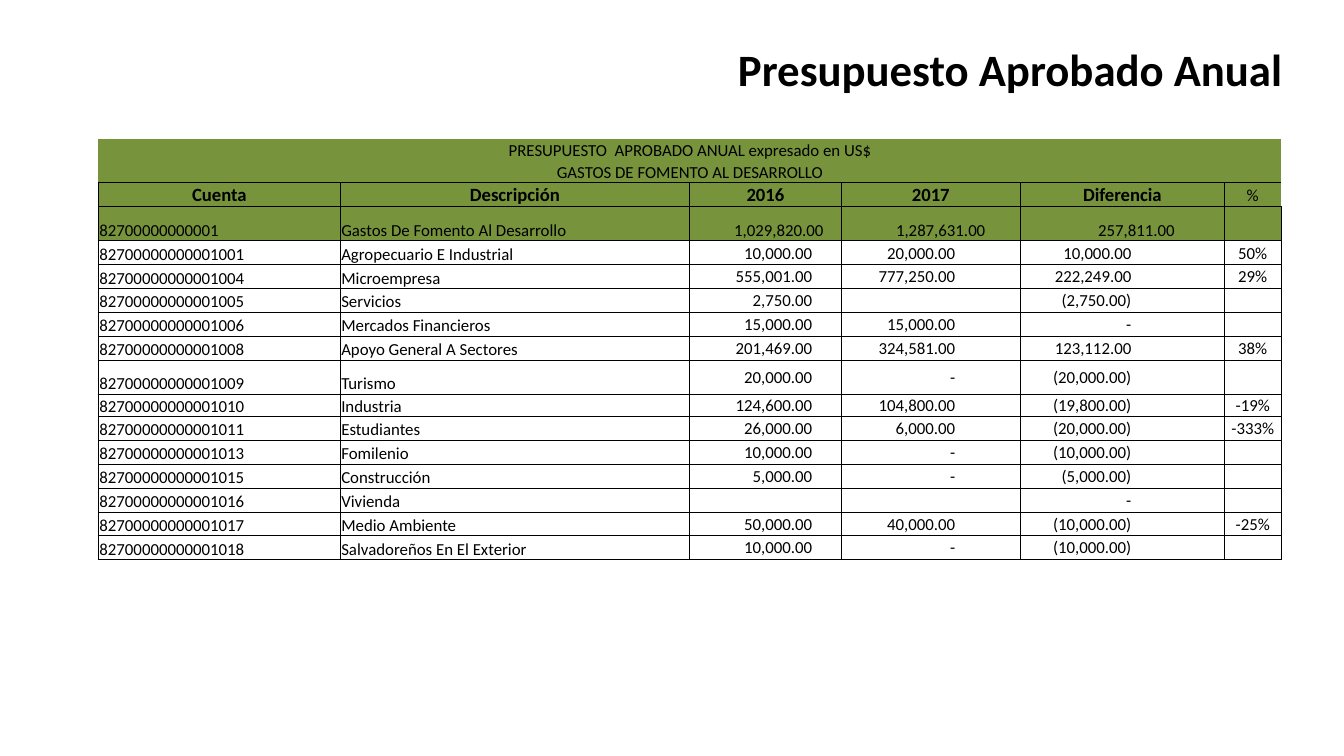
import pptx
import pptx.dml.color
import pptx.enum.text
import pptx.util
from lxml import etree
from pptx.oxml.ns import qn

Cm = pptx.util.Cm
Pt = pptx.util.Pt
ALIGN = pptx.enum.text.PP_ALIGN
ANCHOR = pptx.enum.text.MSO_ANCHOR

BLACK = pptx.dml.color.RGBColor(0x00, 0x00, 0x00)
GREEN = pptx.dml.color.RGBColor(0x77, 0x93, 0x3C)
FONT = "Calibri"
BODY_SIZE = 9

BANDS = ["PRESUPUESTO  APROBADO ANUAL expresado en US$",
         "GASTOS DE FOMENTO AL DESARROLLO"]
HEADINGS = ["Cuenta", "Descripción", "2016", "2017", "Diferencia", "%"]
TOTAL = ["82700000000001", "Gastos De Fomento Al Desarrollo",
         "1,029,820.00", "1,287,631.00", "257,811.00", ""]
ACCOUNT_PREFIX = "82700000000001"
ACCOUNTS = [
    ["001", "Agropecuario E Industrial", "10,000.00", "20,000.00", "10,000.00", "50%"],
    ["004", "Microempresa", "555,001.00", "777,250.00", "222,249.00", "29%"],
    ["005", "Servicios", "2,750.00", "", "(2,750.00)", ""],
    ["006", "Mercados Financieros", "15,000.00", "15,000.00", "-", ""],
    ["008", "Apoyo General A Sectores", "201,469.00", "324,581.00", "123,112.00", "38%"],
    ["009", "Turismo", "20,000.00", "-", "(20,000.00)", ""],
    ["010", "Industria", "124,600.00", "104,800.00", "(19,800.00)", "-19%"],
    ["011", "Estudiantes", "26,000.00", "6,000.00", "(20,000.00)", "-333%"],
    ["013", "Fomilenio", "10,000.00", "-", "(10,000.00)", ""],
    ["015", "Construcción", "5,000.00", "-", "(5,000.00)", ""],
    ["016", "Vivienda", "", "", "-", ""],
    ["017", "Medio Ambiente", "50,000.00", "40,000.00", "(10,000.00)", "-25%"],
    ["018", "Salvadoreños En El Exterior", "10,000.00", "-", "(10,000.00)", ""],
]

COLUMN_WIDTHS = [4.57, 6.6, 2.87, 3.38, 3.86, 1.07]
ROW_HEIGHT = 0.45
SPECIAL_HEIGHTS = {0: 0.41, 1: 0.41, 3: 0.65, 9: 0.65, 10: 0.42}
HEADING_ROW = len(BANDS)
TOTAL_ROW = HEADING_ROW + 1
PERCENT_COLUMN = len(HEADINGS) - 1
# Space to the right of the figures, by column
TOTAL_INDENTS = {2: 0.34, 3: 0.66, 4: 0.94}
ACCOUNT_INDENTS = {2: 0.55, 3: 1.23, 4: 1.76}


def add_title(page, left, top, width, height):
    title = page.shapes.title
    title.left, title.top, title.width, title.height = left, top, width, height
    frame = title.text_frame
    frame.text = "Presupuesto Aprobado Anual"
    frame.vertical_anchor = ANCHOR.MIDDLE
    para = frame.paragraphs[0]
    para.alignment = ALIGN.RIGHT
    set_font(para, 24, True)


def set_font(para, size, bold=False):
    font = para.font
    font.name, font.size, font.bold = FONT, Pt(size), bold
    font.color.rgb = BLACK


def set_borders(cell, sides):
    """Draw thin black lines on the sides named by L, R, T and B, and none elsewhere."""
    properties = cell._tc.get_or_add_tcPr()
    for side in "LRTB":
        line = etree.SubElement(properties, qn(f"a:ln{side}"), w=str(Pt(0.5)))
        if side in sides:
            fill = etree.SubElement(line, qn("a:solidFill"))
            etree.SubElement(fill, qn("a:srgbClr"), val=str(BLACK))
        else:
            etree.SubElement(line, qn("a:noFill"))


def border_sides(row, column):
    if row < HEADING_ROW:
        return "B" if row == HEADING_ROW - 1 else ""
    if row == HEADING_ROW and column == PERCENT_COLUMN:
        return "LTB"
    return "LRTB"


def fill_cell(cell, row, column, text):
    set_borders(cell, border_sides(row, column))
    if row <= TOTAL_ROW:
        cell.fill.solid()
        cell.fill.fore_color.rgb = GREEN
    else:
        cell.fill.background()

    cell.margin_left = cell.margin_right = cell.margin_top = Cm(0.02)
    cell.margin_bottom = 0
    is_figure = row > TOTAL_ROW and column > 1
    cell.vertical_anchor = ANCHOR.MIDDLE if is_figure else ANCHOR.BOTTOM

    cell.text = text
    para = cell.text_frame.paragraphs[0]
    indents = TOTAL_INDENTS if row == TOTAL_ROW else ACCOUNT_INDENTS
    if row <= HEADING_ROW or column == PERCENT_COLUMN:
        para.alignment = ALIGN.CENTER
    elif column in indents:
        para.alignment = ALIGN.RIGHT
        cell.margin_right = Cm(indents[column])
    else:
        para.alignment = ALIGN.LEFT

    is_heading = row == HEADING_ROW and column != PERCENT_COLUMN
    set_font(para, 10 if is_heading else BODY_SIZE, is_heading)
    if not text:
        # Keeps empty cells from stretching their row
        etree.SubElement(para._p, qn("a:endParaRPr"), sz=str(BODY_SIZE * 100))


def add_budget_table(page, left, top, width, height):
    rows = [[band] + [""] * PERCENT_COLUMN for band in BANDS]
    rows += [HEADINGS, TOTAL]
    rows += [[ACCOUNT_PREFIX + code, *rest] for code, *rest in ACCOUNTS]

    table = page.shapes.add_table(
        len(rows), len(HEADINGS), left, top, width, height).table
    table.first_row = table.horz_banding = False
    for column, column_width in zip(table.columns, COLUMN_WIDTHS):
        column.width = Cm(column_width)
    for r, texts in enumerate(rows):
        table.rows[r].height = Cm(SPECIAL_HEIGHTS.get(r, ROW_HEIGHT))
        for c, text in enumerate(texts):
            fill_cell(table.cell(r, c), r, c, text)
    for r in range(len(BANDS)):
        table.cell(r, 0).merge(table.cell(r, PERCENT_COLUMN))


def main():
    deck = pptx.Presentation()
    deck.slide_width, deck.slide_height = Cm(25.4), Cm(14.28)
    page = deck.slides.add_slide(deck.slide_layouts.get_by_name("Title Only"))
    add_title(page, Cm(1.27), Cm(0.58), Cm(23.22), Cm(1.42))
    add_budget_table(page, Cm(1.86), Cm(2.63), Cm(22.35), Cm(7.92))
    deck.save("out.pptx")


if __name__ == "__main__":
    main()
